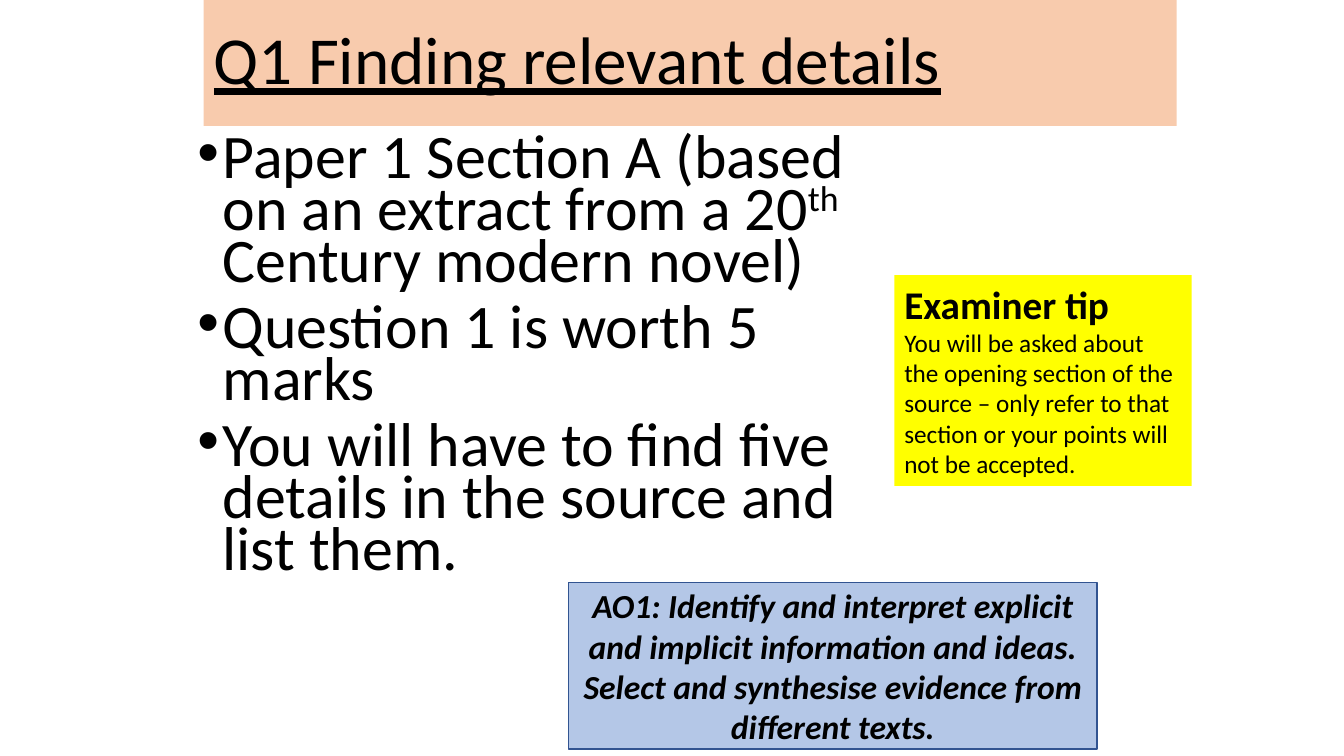
from dataclasses import dataclass

from lxml import etree
from pptx import Presentation
from pptx.dml.color import RGBColor
from pptx.enum.shapes import MSO_SHAPE
from pptx.enum.text import MSO_ANCHOR, MSO_AUTO_SIZE, PP_ALIGN
from pptx.oxml.ns import qn
from pptx.util import Inches, Pt

RECTANGLE = MSO_SHAPE.RECTANGLE
TOP, MIDDLE = MSO_ANCHOR.TOP, MSO_ANCHOR.MIDDLE
LEFT, CENTER = PP_ALIGN.LEFT, PP_ALIGN.CENTER
NO_AUTOFIT = MSO_AUTO_SIZE.NONE
TITLE_ONLY = 5


@dataclass(frozen=True)
class Theme:
    font: str = "Calibri"
    text: str = "000000"
    title_fill: str = "F8CBAD"
    tip_fill: str = "FFFF00"
    objective_fill: str = "B4C7E7"
    objective_line: str = "325491"
    title_size: float = 48
    body_size: float = 44.2
    tip_heading_size: float = 28
    tip_size: float = 18
    objective_size: float = 24


THEME = Theme()


@dataclass(frozen=True)
class Area:
    left: float
    top: float
    width: float
    height: float

    def lengths(self):
        return [Inches(n) for n in (self.left, self.top, self.width, self.height)]


@dataclass(frozen=True)
class Line:
    text: str
    size: float
    bold: bool = False
    italic: bool = False


@dataclass(frozen=True)
class Callout:
    area: Area
    fill: str
    lines: tuple[Line, ...]
    outline: str | None = None
    anchor: MSO_ANCHOR = TOP
    align: PP_ALIGN = LEFT


TITLE = "Q1 Finding relevant details"
TITLE_AREA = Area(2.02, 0, 9.65, 1.25)
BODY_AREA = Area(1.86, 1.31, 6.85, 5.25)

# Every second piece of a bullet is superscript.
BULLETS = (
    ("Paper 1 Section A (based on an extract from a 20", "th", " Century modern novel)"),
    ("Question 1 is worth 5 marks",),
    ("You will have to find five details in the source and list them.",),
)

CALLOUTS = (
    Callout(
        Area(8.87, 2.73, 2.95, 2.09),
        THEME.tip_fill,
        (
            Line("Examiner tip", THEME.tip_heading_size, bold=True),
            Line(
                "You will be asked about the opening section of the source – only refer "
                "to that section or your points will not be accepted.",
                THEME.tip_size,
            ),
        ),
    ),
    Callout(
        Area(5.64, 5.78, 5.24, 1.65),
        THEME.objective_fill,
        (
            Line(
                "AO1: Identify and interpret explicit and implicit information and ideas. "
                "Select and synthesise evidence from different texts.",
                THEME.objective_size,
                bold=True,
                italic=True,
            ),
        ),
        outline=THEME.objective_line,
        anchor=MIDDLE,
        align=CENTER,
    ),
)


def paint(shape, color: str) -> None:
    shape.fill.solid()
    shape.fill.fore_color.rgb = RGBColor.from_string(color)


def style_font(para, size: float) -> None:
    para.font.name = THEME.font
    para.font.size = Pt(size)
    para.font.color.rgb = RGBColor.from_string(THEME.text)


def paragraphs(frame, count: int) -> list:
    """Return exactly count paragraphs of an empty text frame."""
    return [frame.paragraphs[0]] + [frame.add_paragraph() for _ in range(count - 1)]


def add_bullet_mark(para) -> None:
    properties = para._p.get_or_add_pPr()
    properties.set("marL", str(Inches(0.25)))
    properties.set("indent", str(-Inches(0.25)))
    mark_font = etree.Element(qn("a:buFont"), typeface="Arial")
    mark = etree.Element(qn("a:buChar"), char="•")
    defaults = properties.find(qn("a:defRPr"))
    defaults.addprevious(mark_font)
    defaults.addprevious(mark)


def set_title(slide) -> None:
    title = slide.shapes.title
    title.left, title.top, title.width, title.height = TITLE_AREA.lengths()
    paint(title, THEME.title_fill)
    frame = title.text_frame
    frame.text = TITLE
    frame.auto_size = NO_AUTOFIT
    frame.vertical_anchor = MIDDLE
    para = frame.paragraphs[0]
    para.alignment = LEFT
    para.line_spacing = 0.9
    style_font(para, THEME.title_size)
    para.font.underline = True


def add_bullets(slide) -> None:
    frame = slide.shapes.add_textbox(*BODY_AREA.lengths()).text_frame
    frame.word_wrap = True
    for para, pieces in zip(paragraphs(frame, len(BULLETS)), BULLETS):
        para.line_spacing = 0.7
        para.space_before = Pt(10)
        style_font(para, THEME.body_size)
        add_bullet_mark(para)
        for index, piece in enumerate(pieces):
            span = para.add_run()
            span.text = piece
            if index % 2:
                span._r.get_or_add_rPr().set("baseline", "30000")


def add_callout(slide, callout: Callout) -> None:
    box = slide.shapes.add_shape(RECTANGLE, *callout.area.lengths())
    box.shadow.inherit = False
    paint(box, callout.fill)
    if callout.outline:
        box.line.color.rgb = RGBColor.from_string(callout.outline)
        box.line.width = Pt(1)
    else:
        box.line.fill.background()
    frame = box.text_frame
    frame.word_wrap = True
    frame.vertical_anchor = callout.anchor
    for para, line in zip(paragraphs(frame, len(callout.lines)), callout.lines):
        para.text = line.text
        para.alignment = callout.align
        style_font(para, line.size)
        para.font.bold = line.bold
        para.font.italic = line.italic


def main() -> None:
    deck = Presentation()
    deck.slide_width, deck.slide_height = Inches(13.33), Inches(7.5)
    slide = deck.slides.add_slide(deck.slide_layouts[TITLE_ONLY])
    set_title(slide)
    add_bullets(slide)
    for callout in CALLOUTS:
        add_callout(slide, callout)
    deck.save("out.pptx")


if __name__ == "__main__":
    main()
